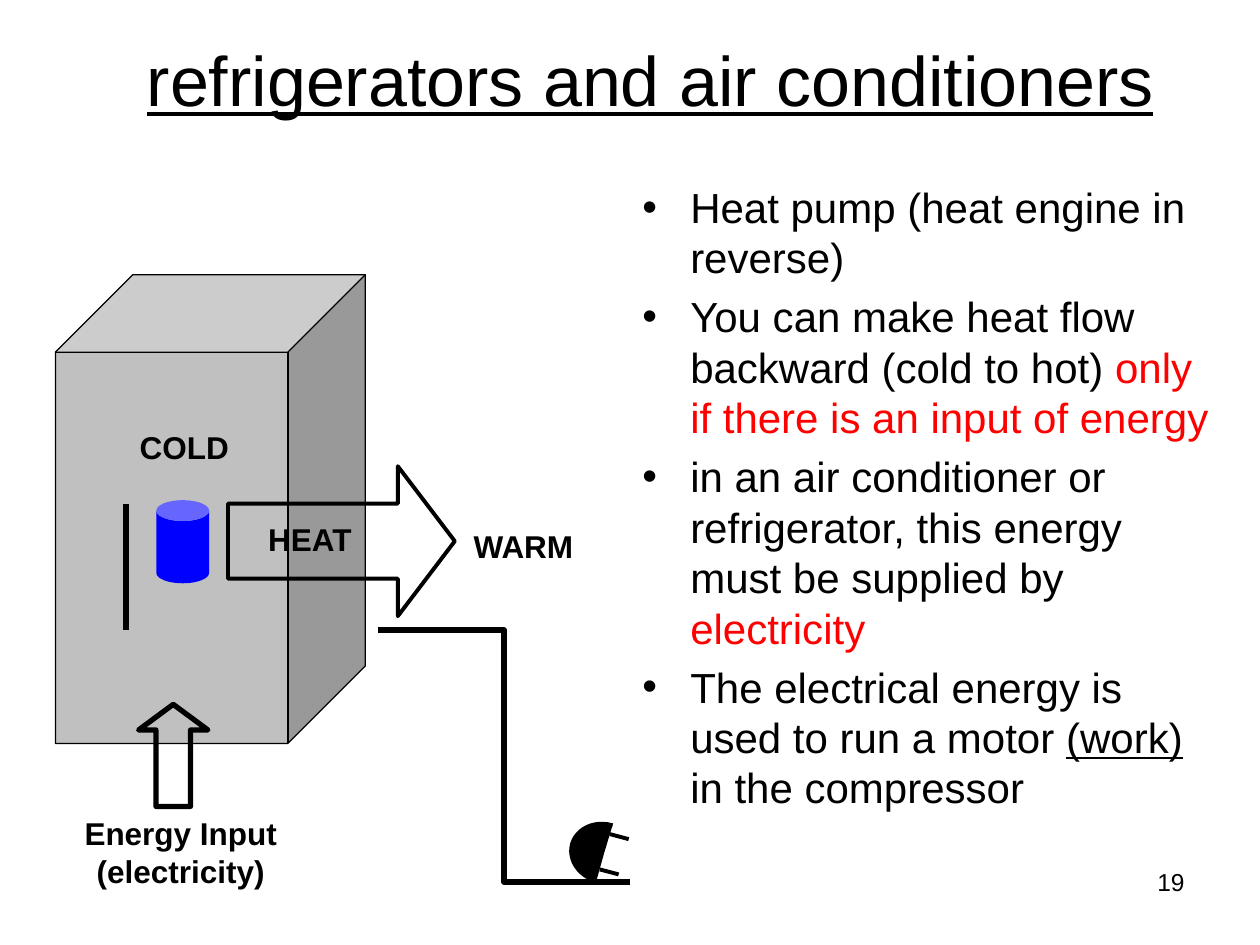
from lxml.etree import SubElement
from pptx import Presentation
from pptx.dml.color import RGBColor
from pptx.enum.shapes import MSO_CONNECTOR, MSO_SHAPE
from pptx.enum.text import MSO_ANCHOR, MSO_AUTO_SIZE, PP_ALIGN
from pptx.oxml.ns import qn
from pptx.util import Inches, Pt

BLACK = RGBColor(0x00, 0x00, 0x00)
RED = RGBColor(0xFF, 0x00, 0x00)
BLUE = RGBColor(0x00, 0x00, 0xFF)
GRAY = RGBColor(0xC0, 0xC0, 0xC0)

LABEL = {"size": Pt(18), "bold": True}
BODY = {"size": Pt(24)}
BODY_RED = {"size": Pt(24), "color": RED}
BODY_UNDERLINED = {"size": Pt(24), "underline": True}

BULLETS = [
    [("Heat pump (heat engine in reverse)", BODY)],
    [("You can make heat flow backward (cold to hot) ", BODY),
     ("only if there is an input of energy", BODY_RED)],
    [("in an air conditioner or refrigerator, this energy must be supplied by ", BODY),
     ("electricity", BODY_RED)],
    [("The electrical energy is used to run a motor ", BODY),
     ("(work)", BODY_UNDERLINED),
     (" in the compressor", BODY)],
]

HANDLE = [(0.61, 3.96), (0.54, 4.08), (0.54, 4.72), (0.62, 4.57)]
CORD = [
    (2.91, 5.21), (3.09, 5.2), (3.27, 5.21), (3.35, 5.22), (3.44, 5.24),
    (3.5, 5.28), (3.54, 5.32), (3.59, 5.34), (3.62, 5.36), (3.65, 5.43),
    (3.67, 5.45), (3.71, 5.55), (3.74, 5.63), (3.74, 5.85), (3.76, 6.09),
    (3.79, 6.18), (3.81, 6.21), (3.84, 6.29), (3.87, 6.31), (3.88, 6.34),
    (3.93, 6.39), (3.94, 6.42), (4.01, 6.48), (4.07, 6.5), (4.11, 6.53),
    (4.18, 6.57), (4.27, 6.63), (4.35, 6.66), (4.39, 6.67), (4.46, 6.7),
    (4.52, 6.72), (4.55, 6.73), (4.56, 6.76), (4.68, 6.77),
]
PRONGS = [((4.76, 6.9), (4.91, 6.94)), ((4.84, 6.62), (4.99, 6.66))]


class SlideBuilder:
    def __init__(self, page, font_name="Arial"):
        self.page = page
        self.font_name = font_name

    def fill_paragraph(self, para, spans, align):
        para.alignment = align
        for text, style in spans:
            for index, line in enumerate(text.split("\n")):
                if index:
                    para.add_line_break()
                span = para.add_run()
                span.text = line
                values = {"name": self.font_name, "color": BLACK, **style}
                span.font.color.rgb = values.pop("color")
                for name, value in values.items():
                    setattr(span.font, name, value)

    def title(self, place, text):
        box = self.page.shapes.title
        for name, value in zip(("left", "top", "width", "height"), place):
            setattr(box, name, Inches(value))
        box.text_frame.vertical_anchor = MSO_ANCHOR.MIDDLE
        style = {"size": Pt(40), "underline": True}
        self.fill_paragraph(box.text_frame.paragraphs[0], [(text, style)], PP_ALIGN.CENTER)

    def text(self, place, text, style, align=PP_ALIGN.LEFT, wrap=False):
        box = self.page.shapes.add_textbox(*map(Inches, place))
        box.text_frame.word_wrap = wrap
        if not wrap:
            box.text_frame.auto_size = MSO_AUTO_SIZE.SHAPE_TO_FIT_TEXT
        self.fill_paragraph(box.text_frame.paragraphs[0], [(text, style)], align)

    def bullets(self, place, items):
        frame = self.page.shapes.add_textbox(*map(Inches, place)).text_frame
        frame.word_wrap = True
        for index, spans in enumerate(items):
            para = frame.add_paragraph() if index else frame.paragraphs[0]
            self.fill_paragraph(para, spans, PP_ALIGN.LEFT)
            para.space_before = Pt(5)
            properties = para._p.get_or_add_pPr()
            properties.set("marL", str(Inches(0.38)))
            properties.set("indent", str(Inches(-0.38)))
            SubElement(properties, qn("a:buFont"), typeface=self.font_name)
            SubElement(properties, qn("a:buChar"), char="•")

    def paint(self, shape, fill, line_width):
        shape.shadow.inherit = False
        if fill is None:
            shape.fill.background()
        else:
            shape.fill.solid()
            shape.fill.fore_color.rgb = fill
        if line_width is None:
            shape.line.fill.background()
        else:
            shape.line.color.rgb = BLACK
            shape.line.width = Pt(line_width)

    def shape(self, kind, place, fill=None, line_width=None, adjustments=(), rotation=0):
        shape = self.page.shapes.add_shape(kind, *map(Inches, place))
        for index, value in enumerate(adjustments):
            shape.adjustments[index] = value
        shape.rotation = rotation
        self.paint(shape, fill, line_width)

    def stroke(self, points, line_width):
        outline = self.page.shapes.build_freeform(*points[0], scale=Inches(1))
        outline.add_line_segments(points[1:], close=False)
        self.paint(outline.convert_to_shape(), None, line_width)

    def line(self, start, end, line_width):
        line = self.page.shapes.add_connector(
            MSO_CONNECTOR.STRAIGHT, *map(Inches, start + end))
        line.line.color.rgb = BLACK
        line.line.width = Pt(line_width)
        SubElement(line._element.spPr, qn("a:effectLst"))


def main():
    deck = Presentation()
    deck.slide_width, deck.slide_height = Inches(10), Inches(7.5)
    builder = SlideBuilder(deck.slides.add_slide(deck.slide_layouts[5]))

    builder.text((7.17, 6.83, 2.33, 0.52), "19", {"size": Pt(14)}, PP_ALIGN.RIGHT, True)
    builder.title((0.47, 0, 9.38, 1.25), "refrigerators and air conditioners")
    builder.bullets((5, 1.39, 4.79, 5.38), BULLETS)

    builder.shape(MSO_SHAPE.CUBE, (0.44, 2.18, 2.46, 3.72), GRAY, 0.75, [0.25])
    builder.stroke(HANDLE, 3)
    builder.shape(MSO_SHAPE.CAN, (1.24, 3.97, 0.42, 0.66), BLUE, adjustments=[0.394])
    builder.text((1.01, 3.35, 0.91, 0.4), "COLD", LABEL)
    builder.text((3.66, 4.13, 1.01, 0.4), "WARM", LABEL)

    builder.shape(MSO_SHAPE.RIGHT_ARROW, (1.81, 3.7, 1.8, 1.19), None, 2.25, [0.5, 0.38])
    builder.text((2.03, 4.08, 0.88, 0.4), "HEAT", LABEL)
    builder.text((0.57, 6.41, 1.73, 0.7), "Energy Input\n(electricity)", LABEL, PP_ALIGN.CENTER)
    builder.shape(MSO_SHAPE.UP_ARROW, (1.1, 5.59, 0.55, 0.81), None, 3, [0.5, 0.37])

    builder.stroke(CORD, 3)
    builder.shape(MSO_SHAPE.ARC, (4.53, 6.54, 0.53, 0.46), BLACK, 2.25, [162, 54.62], 195.7)
    for start, end in PRONGS:
        builder.line(start, end, 2.25)

    deck.save("out.pptx")


if __name__ == "__main__":
    main()
